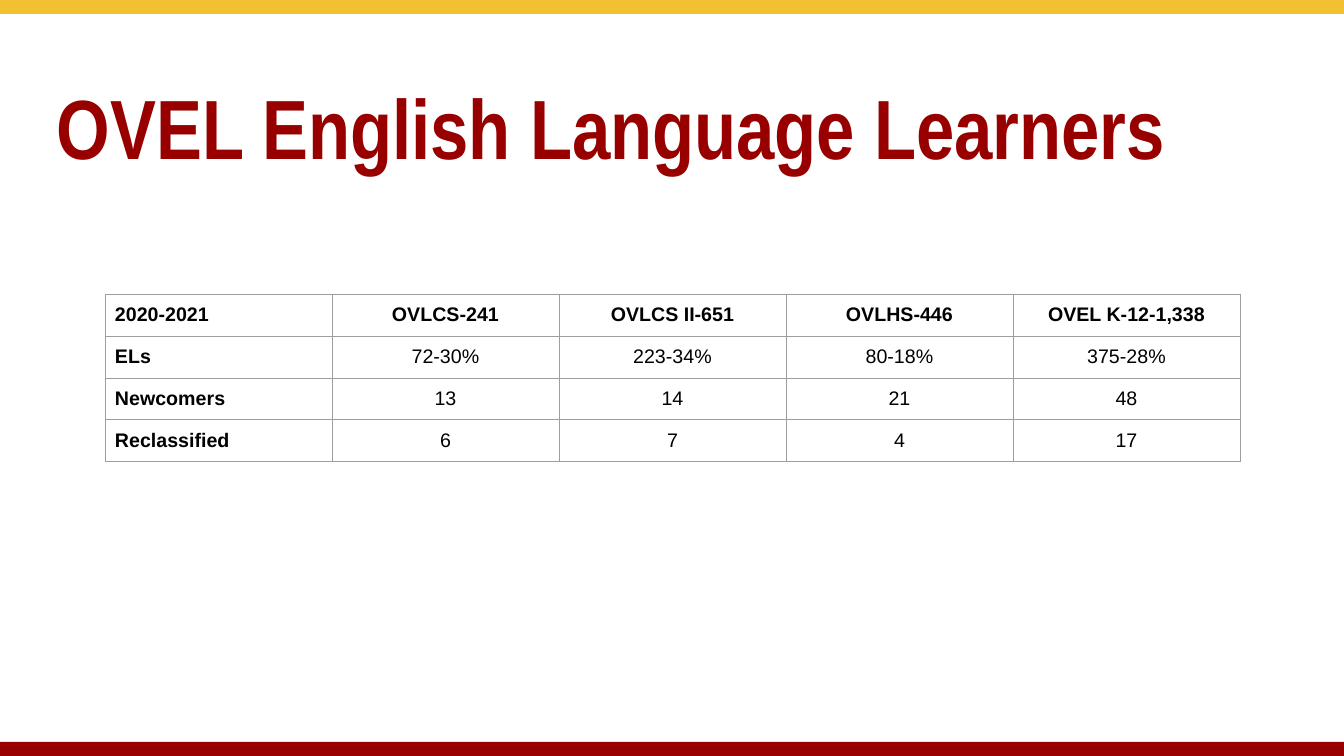
from lxml import etree
from pptx import Presentation
from pptx.dml.color import RGBColor
from pptx.enum.shapes import MSO_SHAPE
from pptx.enum.text import MSO_ANCHOR, MSO_AUTO_SIZE, PP_ALIGN
from pptx.oxml.ns import qn
from pptx.util import Pt

RECTANGLE = MSO_SHAPE.RECTANGLE
TOP, NO_FIT = MSO_ANCHOR.TOP, MSO_AUTO_SIZE.NONE
LEFT, CENTER = PP_ALIGN.LEFT, PP_ALIGN.CENTER

GOLD = RGBColor(0xF1, 0xC1, 0x31)
RED = RGBColor(0x98, 0x00, 0x00)
BLACK = RGBColor(0x00, 0x00, 0x00)
GRAY = RGBColor(0x9E, 0x9E, 0x9E)

WIDTH, HEIGHT, BAND = 1344, 756, 14
COLUMN, ROW, INSET = 227, 42, 10


def px(length):
    return round(length * 914400 / 100.8)


def add_run(paragraph, text, font, size, color, bold):
    run = paragraph.add_run()
    run.text = text
    run.font.name = font
    run.font.size = Pt(size)
    run.font.color.rgb = color
    run.font.bold = bold


prs = Presentation()
prs.slide_width, prs.slide_height = px(WIDTH), px(HEIGHT)
slide = prs.slides.add_slide(prs.slide_layouts[5])

# Bands along the top and bottom edges
for top, color in ((0, GOLD), (HEIGHT - BAND, RED)):
    band = slide.shapes.add_shape(RECTANGLE, 0, px(top), px(WIDTH), px(BAND))
    band.shadow.inherit = False
    band.fill.solid()
    band.fill.fore_color.rgb = color
    band.line.fill.background()

# Title
title = slide.shapes.title
title.left, title.top, title.width, title.height = px(57), px(74), px(1287), px(186)
heading = title.text_frame
heading.word_wrap = True
heading.auto_size = NO_FIT
heading.vertical_anchor = TOP
heading.margin_left = heading.margin_right = heading.margin_bottom = 0
heading.margin_top = px(1)
heading.paragraphs[0].alignment = LEFT
add_run(heading.paragraphs[0], "OVEL English Language Learners", "Arial Narrow", 60, RED, True)

# Learner counts by school
learners = [
    ["2020-2021", "OVLCS-241", "OVLCS II-651", "OVLHS-446", "OVEL K-12-1,338"],
    ["ELs", "72-30%", "223-34%", "80-18%", "375-28%"],
    ["Newcomers", "13", "14", "21", "48"],
    ["Reclassified", "6", "7", "4", "17"],
]
row_count, column_count = len(learners), len(learners[0])
table = slide.shapes.add_table(row_count, column_count, px(105), px(294),
                               px(COLUMN * column_count), px(ROW * row_count)).table
table.horz_banding = False
for column in table.columns:
    column.width = px(COLUMN)
for row in table.rows:
    row.height = px(ROW)

for r, values in enumerate(learners):
    for c, value in enumerate(values):
        cell = table.cell(r, c)
        cell.margin_left = cell.margin_right = px(INSET)
        cell.margin_top = cell.margin_bottom = px(INSET)
        cell.vertical_anchor = TOP
        paragraph = cell.text_frame.paragraphs[0]
        paragraph.alignment = CENTER if c else LEFT
        add_run(paragraph, value, "Arial", 14, BLACK, r == 0 or c == 0)

        # Borders come before the fill in the cell properties
        properties = cell._tc.get_or_add_tcPr()
        for side in ("a:lnL", "a:lnR", "a:lnT", "a:lnB"):
            border = etree.SubElement(properties, qn(side), w=str(Pt(0.75)))
            solid = etree.SubElement(border, qn("a:solidFill"))
            etree.SubElement(solid, qn("a:srgbClr"), val=str(GRAY))
        cell.fill.background()

prs.save("out.pptx")
